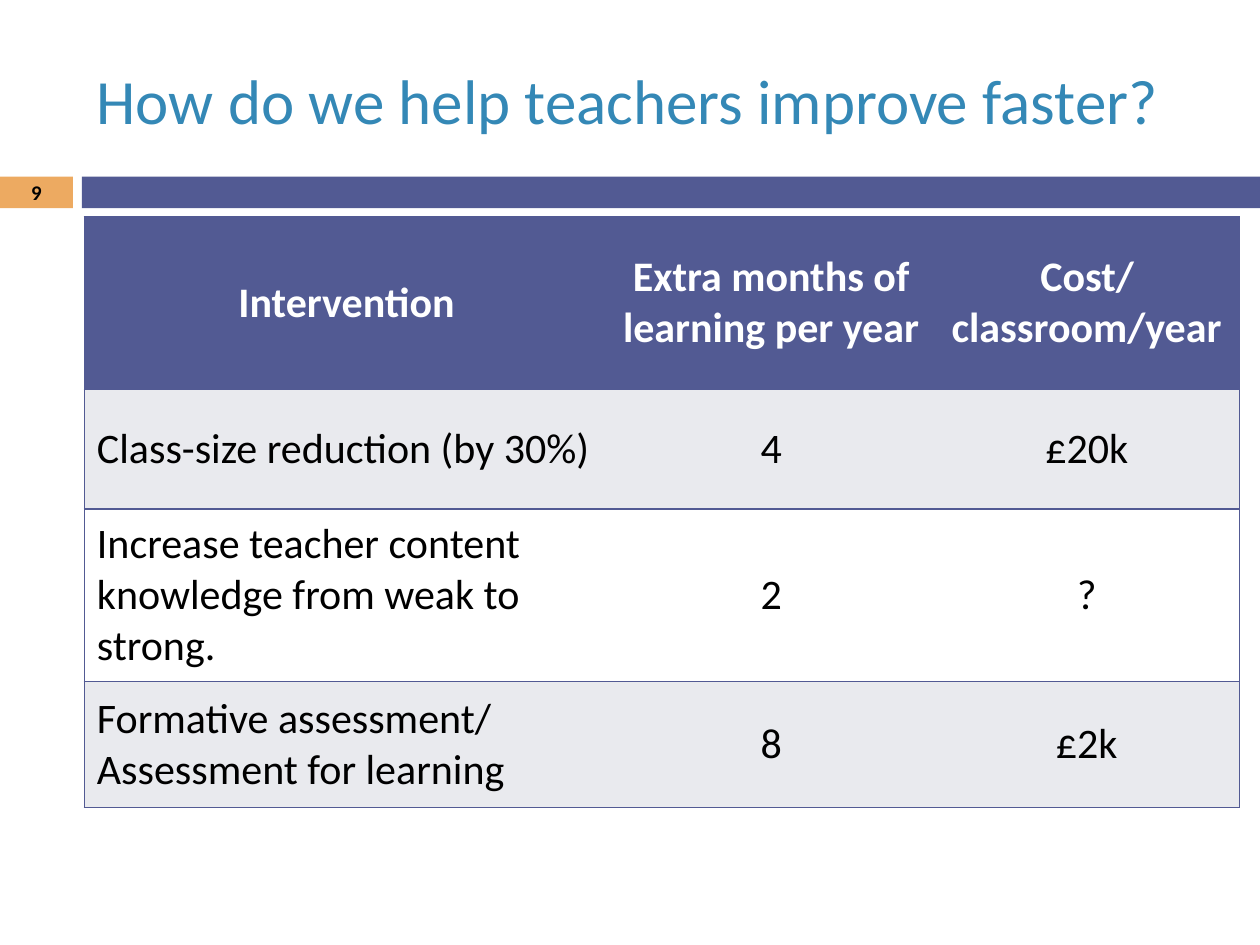
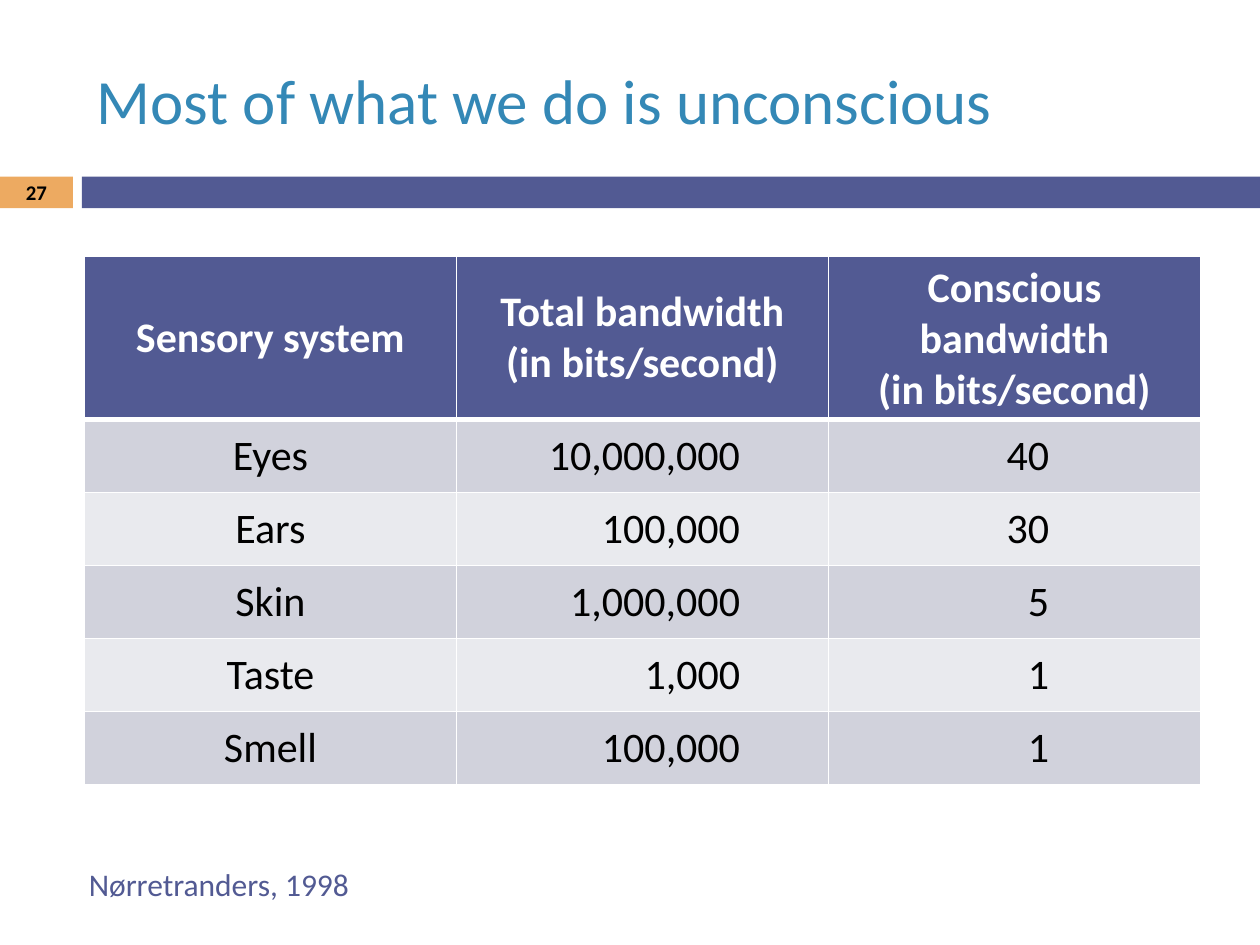
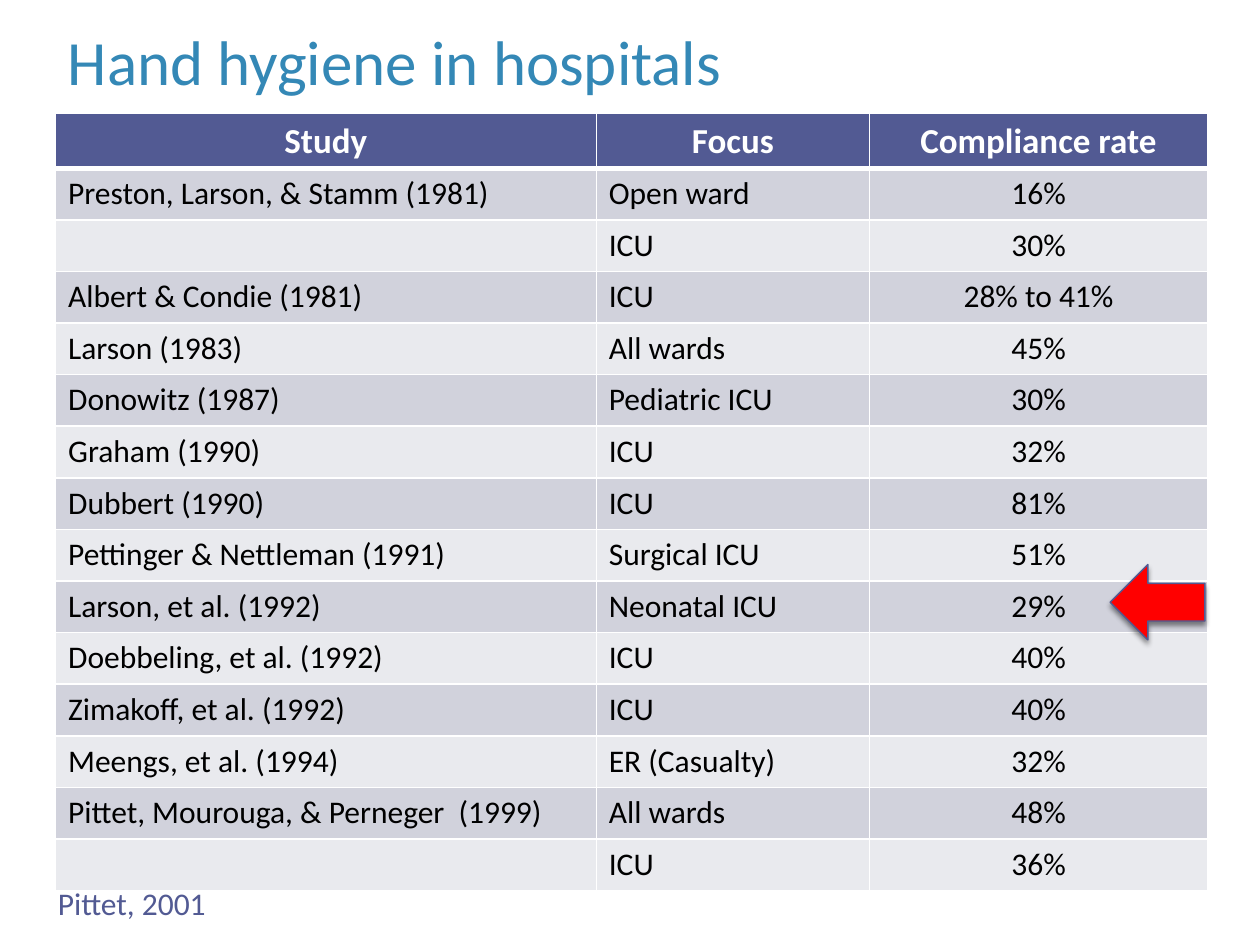
from dataclasses import dataclass
from typing import Optional

from lxml.etree import SubElement
from pptx import Presentation
from pptx.dml.color import RGBColor
from pptx.enum.shapes import MSO_SHAPE
from pptx.enum.text import MSO_ANCHOR, PP_ALIGN
from pptx.oxml.ns import qn
from pptx.util import Cm, Pt

FONT = "Calibri"
WHITE, BLACK, RED = "FFFFFF", "000000", "FF0000"
INDIGO, TEAL, ORANGE = "525A93", "3488B6", "EDAA61"
PALE, GREY = "E9EAEE", "D1D2DC"
ALIGN = {"l": PP_ALIGN.LEFT, "c": PP_ALIGN.CENTER, "r": PP_ALIGN.RIGHT}


@dataclass(frozen=True)
class Box:
    left: float
    top: float
    width: float
    height: float

    def cm(self) -> tuple:
        return Cm(self.left), Cm(self.top), Cm(self.width), Cm(self.height)


@dataclass(frozen=True)
class Column:
    width: float
    align: str = "l"
    right_inset: float = 0.25


@dataclass(frozen=True)
class Grid:
    left: float
    top: float
    columns: tuple
    heights: tuple
    rows: tuple
    stripes: tuple = (GREY, PALE)
    head_size: float = 24
    body_size: float = 24
    body_anchor: MSO_ANCHOR = MSO_ANCHOR.MIDDLE
    boxed: bool = False


@dataclass(frozen=True)
class Page:
    title: str
    title_box: Box
    grid: Grid
    number: Optional[str] = None
    source: Optional[str] = None
    source_box: Optional[Box] = None


def rgb(color: str) -> RGBColor:
    return RGBColor.from_string(color)


def write(tf, text: str, *, size: float, color: str = BLACK, bold: bool = False,
          align: str = "l") -> None:
    for i, line in enumerate(text.split("\n")):
        p = tf.add_paragraph() if i else tf.paragraphs[0]
        p.alignment = ALIGN[align]
        if line:
            r = p.add_run()
            r.text = line
            r.font.name, r.font.size, r.font.bold = FONT, Pt(size), bold
            r.font.color.rgb = rgb(color)


def add_text(s, box: Box, text: str, anchor: MSO_ANCHOR = MSO_ANCHOR.TOP, **fmt) -> None:
    tf = s.shapes.add_textbox(*box.cm()).text_frame
    tf.word_wrap = True
    tf.vertical_anchor = anchor
    write(tf, text, **fmt)


def add_shape(s, kind: MSO_SHAPE, box: Box, fill: str, line: Optional[str] = None):
    sp = s.shapes.add_shape(kind, *box.cm())
    sp.shadow.inherit = False
    sp.fill.solid()
    sp.fill.fore_color.rgb = rgb(fill)
    if line:
        sp.line.color.rgb = rgb(line)
        sp.line.width = Pt(0.79)
    else:
        sp.line.fill.background()
    return sp


def add_shadow(sp) -> None:
    effects = sp._element.spPr.find(qn("a:effectLst"))
    shadow = SubElement(effects, qn("a:outerShdw"), blurRad=str(Pt(3)), dist=str(Pt(2.4)),
                        dir="5400000", rotWithShape="0")
    color = SubElement(shadow, qn("a:srgbClr"), val=BLACK)
    SubElement(color, qn("a:alpha"), val="45000")


def set_borders(cell, edges: dict) -> None:
    tc_pr = cell._tc.get_or_add_tcPr()
    for i, side in enumerate("LRTB"):
        color, width = edges[side]
        ln = SubElement(tc_pr, qn(f"a:ln{side}"), w=str(Pt(width)))
        tc_pr.insert(i, ln)
        if color:
            SubElement(SubElement(ln, qn("a:solidFill")), qn("a:srgbClr"), val=color)
        else:
            SubElement(ln, qn("a:noFill"))


def cell_edges(grid: Grid, row: int, col: int) -> dict:
    if grid.boxed:
        edges = dict.fromkeys("LRTB", (INDIGO, 1))
        if col > 0:
            edges["L"] = (None, 1)
        if col < len(grid.columns) - 1:
            edges["R"] = (None, 1)
        return edges
    edges = dict.fromkeys("LRTB", (WHITE, 1))
    if row == 0:
        edges["B"] = (WHITE, 3)
    elif row == 1:
        edges["T"] = (WHITE, 3)
    return edges


def add_grid(s, grid: Grid) -> None:
    box = Box(grid.left, grid.top, sum(c.width for c in grid.columns), sum(grid.heights))
    table = s.shapes.add_table(len(grid.rows), len(grid.columns), *box.cm()).table
    for j, column in enumerate(grid.columns):
        table.columns[j].width = Cm(column.width)
    for i, row in enumerate(grid.rows):
        table.rows[i].height = Cm(grid.heights[i])
        head = i == 0
        for j, (column, text) in enumerate(zip(grid.columns, row)):
            cell = table.cell(i, j)
            cell.vertical_anchor = MSO_ANCHOR.MIDDLE if head else grid.body_anchor
            cell.fill.solid()
            cell.fill.fore_color.rgb = rgb(INDIGO if head else grid.stripes[(i - 1) % 2])
            set_borders(cell, cell_edges(grid, i, j))
            if head:
                write(cell.text_frame, text, size=grid.head_size, color=WHITE, bold=True,
                      align="c")
            else:
                cell.margin_right = Cm(column.right_inset)
                write(cell.text_frame, text, size=grid.body_size, align=column.align)


def add_page(prs, page: Page):
    s = prs.slides.add_slide(prs.slide_layouts[6])
    if page.number:
        add_shape(s, MSO_SHAPE.RECTANGLE, Box(0, 3.56, 1.47, 0.64), ORANGE)
        add_shape(s, MSO_SHAPE.RECTANGLE, Box(1.65, 3.56, 23.75, 0.64), INDIGO)
        add_text(s, Box(0, 3.54, 1.47, 0.68), page.number, MSO_ANCHOR.MIDDLE,
                 size=11.9, bold=True, align="c")
    add_text(s, page.title_box, page.title, MSO_ANCHOR.MIDDLE, size=36, color=TEAL)
    add_grid(s, page.grid)
    if page.source:
        add_text(s, page.source_box, page.source, size=18, color=INDIGO, align="r")
    return s


BANDED_TITLE = Box(1.7, 0.64, 22.66, 2.74)

INTERVENTIONS = Page(
    "How do we help teachers improve faster?", BANDED_TITLE, number="9",
    grid=Grid(
        1.7, 4.37,
        (Column(10.57), Column(6.55, "c"), Column(6.17, "c")),
        (3.48, 2.41, 3.48, 2.54),
        (
            ("Intervention", "Extra months of learning per year", "Cost/classroom/year"),
            ("Class-size reduction (by 30%)", "4", "£20k"),
            ("Increase teacher content knowledge from weak to strong.", "2", "?"),
            ("Formative assessment/\nAssessment for learning", "8", "£2k"),
        ),
        stripes=(PALE, WHITE), boxed=True))

BANDWIDTH = Page(
    "Most of what we do is unconscious", BANDED_TITLE, number="27",
    source="Nørretranders, 1998", source_box=Box(0.61, 17.32, 6.68, 1.02),
    grid=Grid(
        1.7, 5.16,
        (Column(7.5, "c"), Column(7.5, "r", 1.78), Column(7.5, "r", 3.05)),
        (3.28,) + (1.47,) * 5,
        (
            ("Sensory system", "Total bandwidth\n(in bits/second)",
             "Conscious bandwidth\n(in bits/second)"),
            ("Eyes", "10,000,000", "40"),
            ("Ears", "100,000", "30"),
            ("Skin", "1,000,000", "5"),
            ("Taste", "1,000", "1"),
            ("Smell", "100,000", "1"),
        )))

HYGIENE = Page(
    "Hand hygiene in hospitals", Box(1.12, 0.33, 23.22, 1.78),
    source="Pittet, 2001", source_box=Box(0.51, 17.7, 3.89, 1.02),
    grid=Grid(
        1.12, 2.29,
        (Column(10.9), Column(5.51), Column(6.81, "c")),
        (1.04,) * 15,
        (
            ("Study", "Focus", "Compliance rate"),
            ("Preston, Larson, & Stamm (1981)", "Open ward", "16%"),
            ("", "ICU", "30%"),
            ("Albert & Condie (1981)", "ICU", "28% to 41%"),
            ("Larson (1983)", "All wards", "45%"),
            ("Donowitz (1987)", "Pediatric ICU", "30%"),
            ("Graham (1990)", "ICU", "32%"),
            ("Dubbert (1990)", "ICU", "81%"),
            ("Pettinger & Nettleman (1991)", "Surgical ICU", "51%"),
            ("Larson, et al. (1992)", "Neonatal ICU", "29%"),
            ("Doebbeling, et al. (1992)", "ICU", "40%"),
            ("Zimakoff, et al. (1992)", "ICU", "40%"),
            ("Meengs, et al. (1994)", "ER (Casualty)", "32%"),
            ("Pittet, Mourouga, & Perneger  (1999)", "All wards", "48%"),
            ("", "ICU", "36%"),
        ),
        head_size=20, body_size=18, body_anchor=MSO_ANCHOR.TOP))


def main() -> None:
    prs = Presentation()
    prs.slide_width, prs.slide_height = Cm(25.4), Cm(19.05)
    add_page(prs, INTERVENTIONS)
    add_page(prs, BANDWIDTH)
    s = add_page(prs, HYGIENE)
    arrow = add_shape(s, MSO_SHAPE.LEFT_ARROW, Box(22.38, 11.38, 1.91, 1.52), RED, INDIGO)
    add_shadow(arrow)
    prs.save("out.pptx")


if __name__ == "__main__":
    main()
